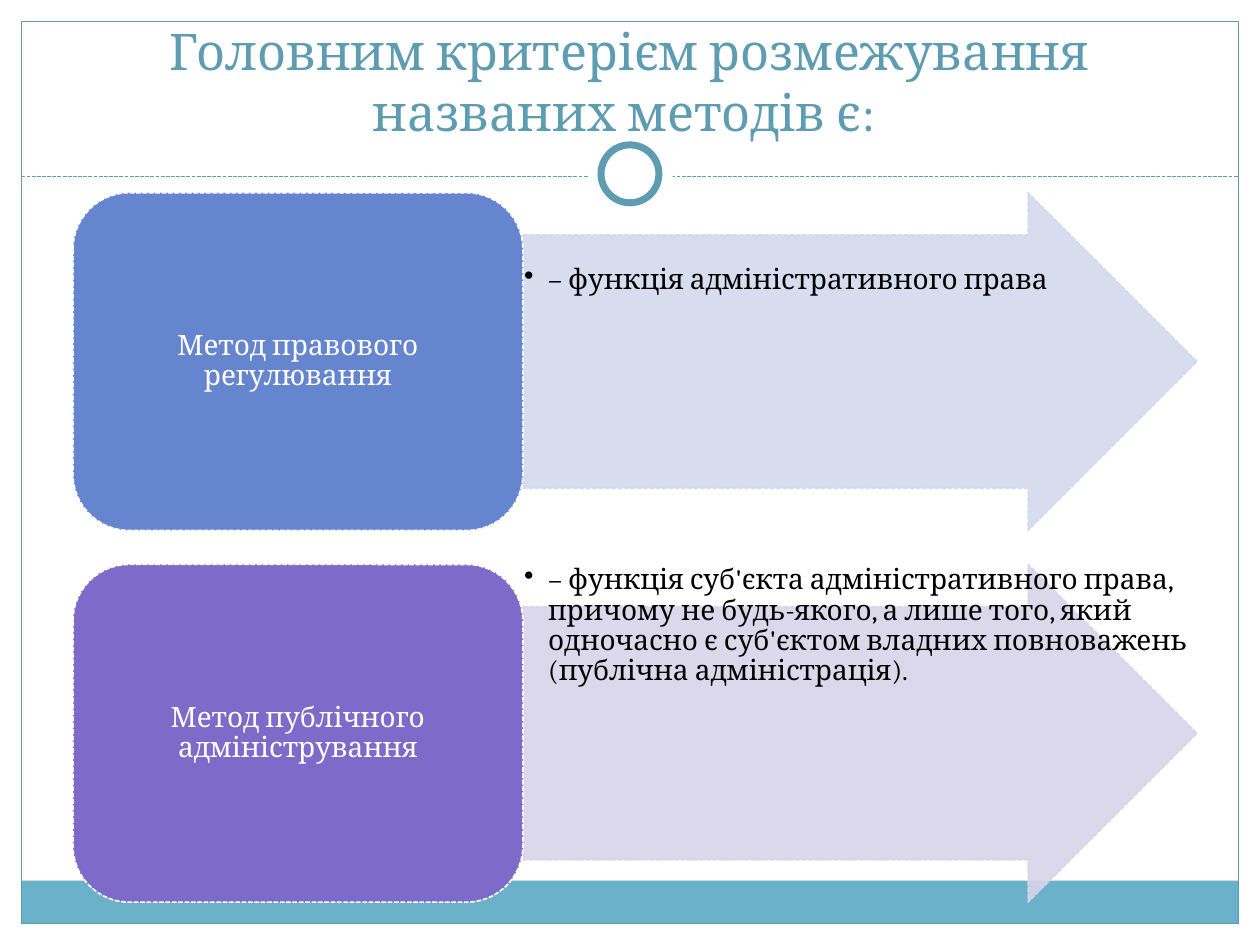
from lxml import etree
from pptx import Presentation
from pptx.dml.color import RGBColor
from pptx.enum.dml import MSO_LINE
from pptx.enum.shapes import MSO_CONNECTOR, MSO_SHAPE
from pptx.enum.text import MSO_ANCHOR, PP_ALIGN
from pptx.oxml.ns import qn
from pptx.util import Inches, Pt

FONT = "Cambria"
WHITE = RGBColor(0xFF, 0xFF, 0xFF)
BLACK = RGBColor(0x00, 0x00, 0x00)
TEAL = RGBColor(0x5E, 0x9C, 0xB1)
LIGHT_TEAL = RGBColor(0x6B, 0xB1, 0xC9)
BLUE = RGBColor(0x65, 0x85, 0xCF)
PALE_BLUE = RGBColor(0xD3, 0xD9, 0xED)
VIOLET = RGBColor(0x7E, 0x6B, 0xC9)
PALE_VIOLET = RGBColor(0xD8, 0xD4, 0xEB)

CARD_LEFT, CARD_WIDTH = 0.58, 3.57
ARROW_LEFT, ARROW_WIDTH = CARD_LEFT + CARD_WIDTH, 5.35
ROW_TOP, ROW_HEIGHT, ROW_STEP = 1.53, 2.68, 2.95

# label, description, drop of the description, card colour, arrow colour
METHODS = [
    ("Метод правового регулювання", "– функція адміністративного права",
     0.57, BLUE, PALE_BLUE),
    ("Метод публічного адміністрування",
     "– функція суб'єкта адміністративного права, причому не будь-якого, "
     "а лише того, який одночасно є суб'єктом владних повноважень "
     "(публічна адміністрація).",
     0, VIOLET, PALE_VIOLET),
]


def add_shape(slide, kind, area, fill=None, line=None, width=0.75, dash=None):
    shape = slide.shapes.add_shape(kind, *map(Inches, area))
    shape.shadow.inherit = False
    if fill is None:
        shape.fill.background()
    else:
        shape.fill.solid()
        shape.fill.fore_color.rgb = fill
    if line is None:
        shape.line.fill.background()
    else:
        shape.line.color.rgb = line
        shape.line.width = Pt(width)
        shape.line.dash_style = dash
    return shape


def make_translucent(shape, percent):
    """Set the opacity of the fill and the line."""
    for color in shape._element.spPr.iter(qn("a:srgbClr")):
        etree.SubElement(color, qn("a:alpha"), val=str(percent * 1000))


def add_divider(slide):
    divider = slide.shapes.add_connector(
        MSO_CONNECTOR.STRAIGHT, Inches(0.17), Inches(1.4), Inches(9.83), Inches(1.4))
    divider.line.color.rgb = TEAL
    divider.line.width = Pt(0.75)
    divider.line.dash_style = MSO_LINE.SQUARE_DOT
    etree.SubElement(divider._element.spPr, qn("a:effectLst"))


def write_text(shape, text, size, color, anchor, align, insets):
    """Fill the shape with one paragraph and return it."""
    frame = shape.text_frame
    frame.word_wrap = True
    frame.vertical_anchor = anchor
    frame.margin_left = frame.margin_right = Inches(insets[0])
    frame.margin_top = frame.margin_bottom = Inches(insets[1])
    para = frame.paragraphs[0]
    para.alignment = align
    span = para.add_run()
    span.text = text
    span.font.name = FONT
    span.font.size = Pt(size)
    span.font.color.rgb = color
    return para


def add_bullet(para):
    properties = para._p.get_or_add_pPr()
    properties.set("marL", str(Inches(0.19)))
    properties.set("indent", str(-Inches(0.19)))
    etree.SubElement(properties, qn("a:buChar"), char="•")


def add_frame(slide):
    add_shape(slide, MSO_SHAPE.RECTANGLE, (0.17, 6.99, 9.66, 0.34), LIGHT_TEAL)
    add_shape(slide, MSO_SHAPE.RECTANGLE, (0.17, 0.17, 9.66, 7.16), line=TEAL)
    add_divider(slide)
    add_shape(slide, MSO_SHAPE.OVAL, (4.67, 1.05, 0.67, 0.67), WHITE)
    add_shape(slide, MSO_SHAPE.OVAL, (4.77, 1.15, 0.46, 0.46), WHITE, TEAL, 4)


def add_title(slide):
    box = slide.shapes.add_textbox(*map(Inches, (0.33, 0.25, 9.33, 0.92)))
    write_text(box, "Головним критерієм розмежування названих методів є: ", 28.8,
               TEAL, MSO_ANCHOR.BOTTOM, PP_ALIGN.CENTER, (0.1, 0.05))


def add_method(slide, top, label, description, drop, card_color, arrow_color):
    arrow = add_shape(slide, MSO_SHAPE.RIGHT_ARROW,
                      (ARROW_LEFT, top, ARROW_WIDTH, ROW_HEIGHT),
                      arrow_color, arrow_color, 0.9, MSO_LINE.SQUARE_DOT)
    arrow.adjustments[0] = 0.75
    arrow.adjustments[1] = 0.5
    make_translucent(arrow, 90)

    box = slide.shapes.add_textbox(*map(
        Inches, (ARROW_LEFT, top + drop, ARROW_WIDTH, ROW_HEIGHT - drop)))
    para = write_text(box, description, 16, BLACK, MSO_ANCHOR.TOP,
                      PP_ALIGN.LEFT, (0.01, 0.01))
    para.line_spacing = 0.9
    add_bullet(para)

    card = add_shape(slide, MSO_SHAPE.ROUNDED_RECTANGLE,
                     (CARD_LEFT, top, CARD_WIDTH, ROW_HEIGHT),
                     card_color, WHITE, 0.9, MSO_LINE.SQUARE_DOT)
    para = write_text(card, label, 16, WHITE, MSO_ANCHOR.MIDDLE,
                      PP_ALIGN.CENTER, (0.2, 0.16))
    para.line_spacing = 0.9


def main():
    deck = Presentation()
    deck.slide_width, deck.slide_height = Inches(10), Inches(7.5)
    slide = deck.slides.add_slide(deck.slide_layouts[6])
    add_frame(slide)
    add_title(slide)
    for row, method in enumerate(METHODS):
        add_method(slide, ROW_TOP + row * ROW_STEP, *method)
    deck.save("out.pptx")


if __name__ == "__main__":
    main()
